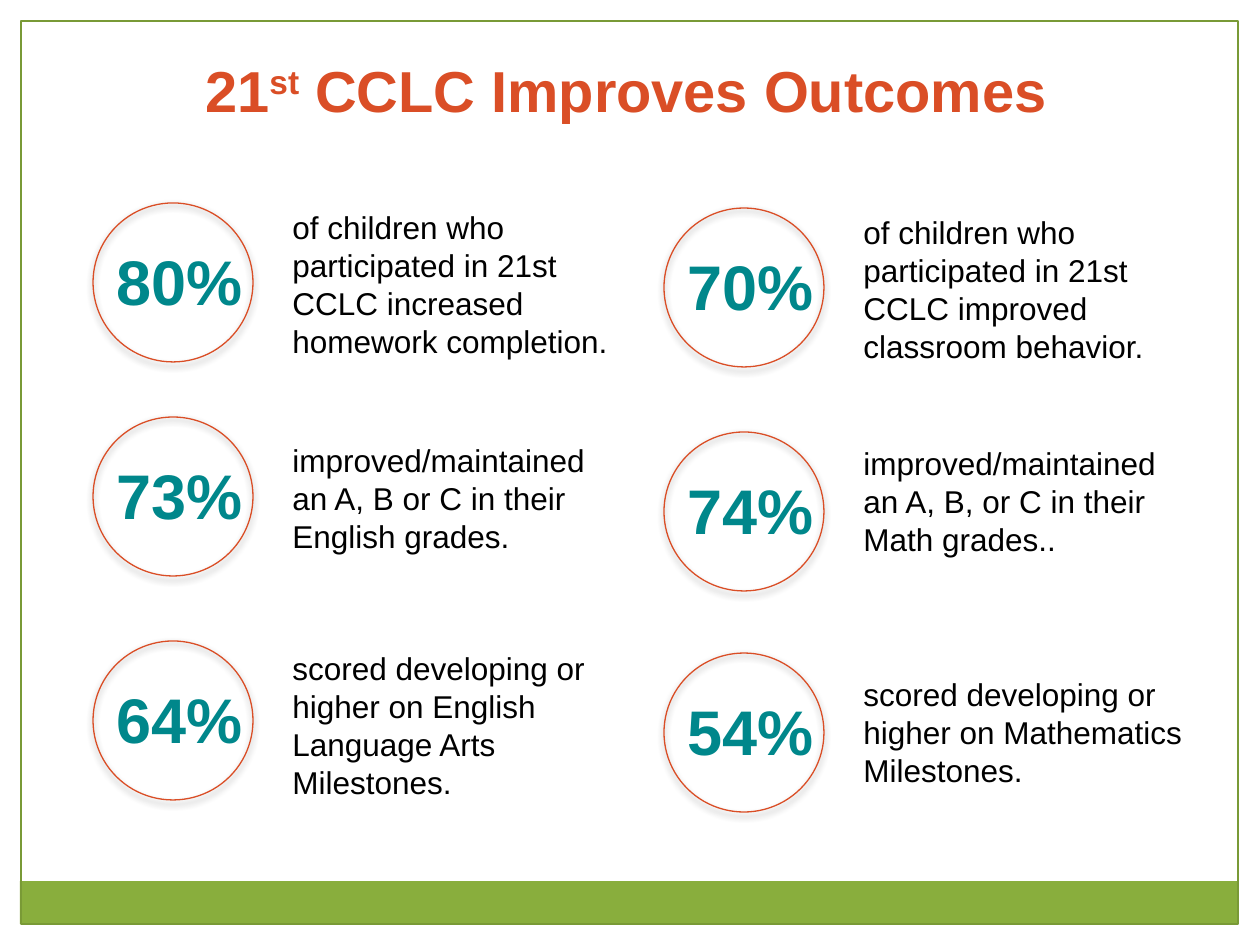
from lxml import etree
from pptx import Presentation
from pptx.dml.color import RGBColor
from pptx.enum.shapes import MSO_SHAPE as Shape
from pptx.enum.text import MSO_ANCHOR as Anchor, MSO_AUTO_SIZE as AutoSize, PP_ALIGN as Align
from pptx.oxml import parse_xml
from pptx.oxml.ns import nsdecls
from pptx.util import Emu, Pt

ORANGE = RGBColor(0xDA, 0x4E, 0x26)
TEAL = RGBColor(0x00, 0x87, 0x8B)
BLACK = RGBColor(0x00, 0x00, 0x00)
GREEN = RGBColor(0x89, 0xAE, 0x3D)
DARK_GREEN = RGBColor(0x79, 0x9A, 0x36)

PX = 914400 / 126
FONT = "Arial"

TITLE = [("21", False), ("st", True), (" CCLC Improves Outcomes", False)]

# circle left, then (percent, circle top, text top, text width, text height, text)
COLUMNS = [
    (93, [
        ("80%", 203, 202, 346, 165,
         "of children who participated in 21st CCLC increased homework completion."),
        ("73%", 417, 435, 346, 127,
         "improved/maintained an A, B or C in their English grades."),
        ("64%", 641, 643, 346, 165,
         "scored developing or higher on English Language Arts Milestones."),
    ]),
    (664, [
        ("70%", 208, 207, 346, 165,
         "of children who participated in 21st CCLC improved classroom behavior."),
        ("74%", 432, 438, 346, 127,
         "improved/maintained an A, B, or C in their Math grades.."),
        ("54%", 653, 669, 364, 127,
         "scored developing or higher on Mathematics Milestones."),
    ]),
]

SHADOW = (f'<a:effectLst {nsdecls("a")}>'
          '<a:outerShdw blurRad="50800" dist="25400" dir="5400000" rotWithShape="0">'
          '<a:srgbClr val="000000"><a:alpha val="45000"/></a:srgbClr>'
          '</a:outerShdw></a:effectLst>')


def scaled(*lengths):
    return [Emu(round(length * PX)) for length in lengths]


def add_figure(slide, kind, bounds, fill=None, line=None):
    figure = slide.shapes.add_shape(kind, *scaled(*bounds))
    figure.shadow.inherit = False
    if fill is None:
        figure.fill.background()
    else:
        figure.fill.solid()
        figure.fill.fore_color.rgb = fill
    if line is None:
        figure.line.fill.background()
    else:
        figure.line.color.rgb = line
        figure.line.width = Pt(0.75)
    return figure


def add_circle(slide, left, top):
    circle = add_figure(slide, Shape.OVAL, (left, top, 160, 159), line=ORANGE)
    properties = circle.element.spPr
    properties.remove(properties.find("{*}effectLst"))
    properties.append(parse_xml(SHADOW))


def style(span, size, color, bold=False):
    span.font.name = FONT
    span.font.size = Pt(size)
    span.font.bold = bold
    span.font.color.rgb = color


def add_text(slide, bounds, text, size, color, bold=False):
    box = slide.shapes.add_textbox(*scaled(*bounds))
    frame = box.text_frame
    frame.word_wrap = True
    frame.auto_size = AutoSize.SHAPE_TO_FIT_TEXT
    frame.text = text
    style(frame.paragraphs[0].runs[0], size, color, bold)


def add_title(slide):
    frame = slide.shapes.add_textbox(*scaled(38, 25, 1176, 105)).text_frame
    frame.word_wrap = True
    frame.vertical_anchor = Anchor.BOTTOM
    para = frame.paragraphs[0]
    para.alignment = Align.CENTER
    for text, raised in TITLE:
        span = para.add_run()
        span.text = text
        style(span, 33, ORANGE, bold=True)
        if raised:
            span.font._element.set("baseline", "30000")


def main():
    deck = Presentation()
    deck.slide_width, deck.slide_height = scaled(1260, 945)
    slide = deck.slides.add_slide(deck.slide_layouts[6])

    add_figure(slide, Shape.RECTANGLE, (20, 881, 1218, 43), fill=GREEN)
    add_figure(slide, Shape.RECTANGLE, (21, 21, 1217, 903), line=DARK_GREEN)
    add_title(slide)

    for left, outcomes in COLUMNS:
        for percent, top, text_top, width, height, text in outcomes:
            add_circle(slide, left, top)
            add_text(slide, (left + 11, top + 33, 318, 89), percent, 36, TEAL, bold=True)
            add_text(slide, (left + 187, text_top, width, height), text, 18, BLACK)

    deck.save("out.pptx")


if __name__ == "__main__":
    main()
